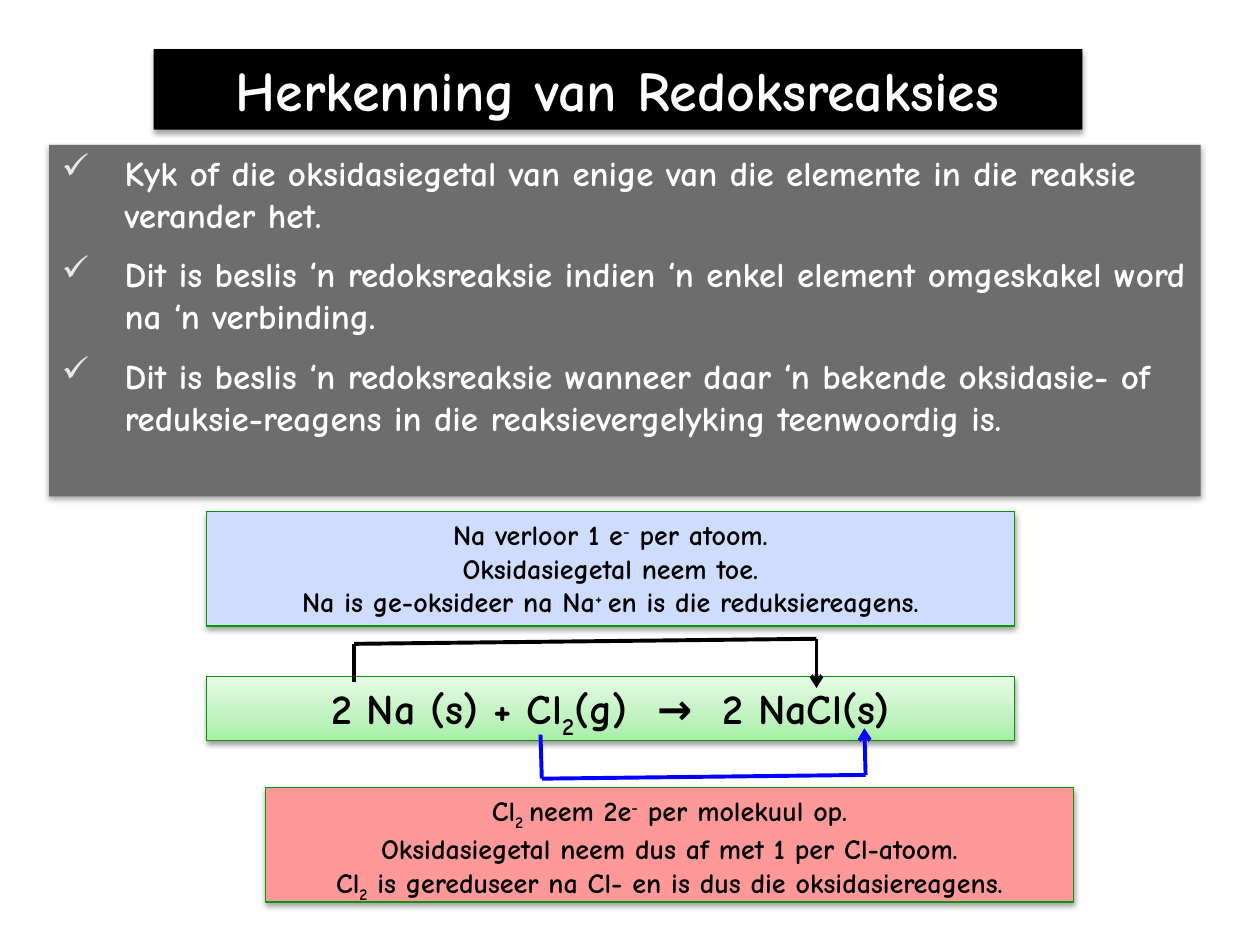
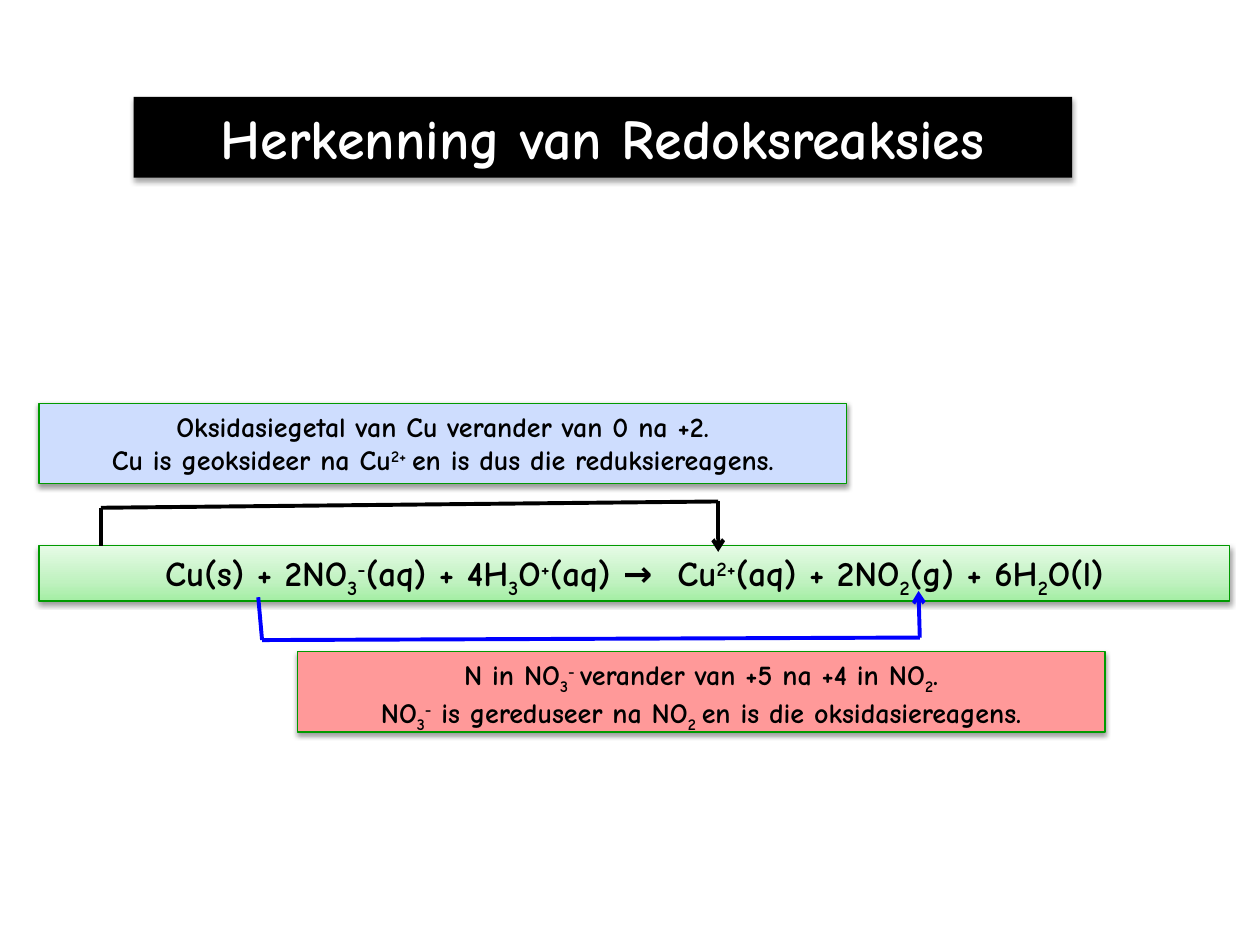
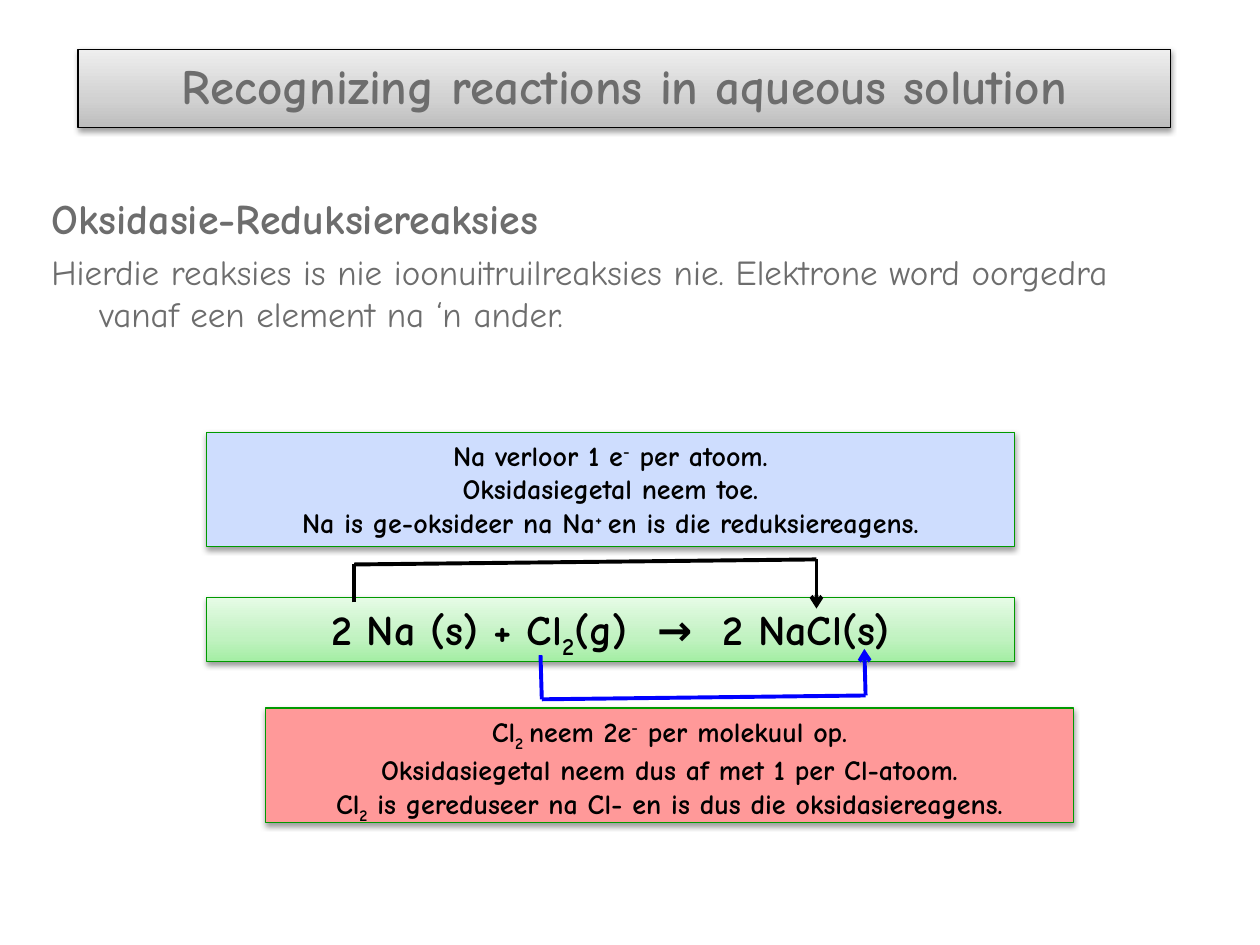
from copy import deepcopy
from dataclasses import dataclass
from itertools import pairwise

from pptx import Presentation
from pptx import util as u
from pptx.dml.color import RGBColor
from pptx.enum import shapes, text
from pptx.oxml import parse_xml
from pptx.oxml.ns import nsdecls, qn
from pptx.oxml.xmlchemy import OxmlElement

FONT = "Comic Neue"
BLACK = RGBColor(0x00, 0x00, 0x00)
WHITE = RGBColor(0xFF, 0xFF, 0xFF)
GREY = RGBColor(0x6D, 0x6D, 0x6D)
PALE_GREY = RGBColor(0xE9, 0xE9, 0xE9)
BLUE = RGBColor(0x00, 0x00, 0xFF)
GREEN = RGBColor(0x00, 0x9A, 0x00)
LIGHT_BLUE = RGBColor(0xCE, 0xDD, 0xFE)
LIGHT_RED = RGBColor(0xFF, 0x99, 0x99)
GREEN_FADE = (
    RGBColor(0xA4, 0xEE, 0xA4),
    RGBColor(0xC0, 0xF2, 0xC0),
    RGBColor(0xE6, 0xFB, 0xE6),
)
GREY_FADE = (
    RGBColor(0xBD, 0xBD, 0xBD),
    RGBColor(0xD1, 0xD1, 0xD1),
    RGBColor(0xEE, 0xEE, 0xEE),
)
FADE_POSITIONS = (0, 0.35, 1)
BASELINES = {"_": "-25000", "^": "30000"}
TITLE = "Herkenning van Redoksreaksies"
NOTE_WIDTH = 6.41


@dataclass(frozen=True)
class Frame:
    left: float
    top: float
    width: float
    height: float

    def raised(self, rise: float) -> "Frame":
        return Frame(self.left, self.top - rise, self.width, self.height)

    def lengths(self) -> list:
        return [u.Inches(n) for n in (self.left, self.top, self.width, self.height)]


@dataclass(frozen=True)
class Note:
    frame: Frame
    lines: tuple[str, ...]


@dataclass(frozen=True)
class Reaction:
    equation: Note
    equation_size: int
    oxidation: Note
    reduction: Note
    oxidation_path: tuple[tuple[float, float], ...]
    reduction_path: tuple[tuple[float, float], ...]


SODIUM = Reaction(
    equation=Note(
        Frame(1.64, 5.37, NOTE_WIDTH, 0.51), ("2 Na (s) + Cl|_2|(g)  →  2 NaCl(s)",)
    ),
    equation_size=24,
    oxidation=Note(
        Frame(1.64, 4.06, NOTE_WIDTH, 0.91),
        (
            "Na verloor 1 e|^-| per atoom.",
            "Oksidasiegetal neem toe.",
            "Na is ge-oksideer na Na|^+ |en is die reduksiereagens.",
        ),
    ),
    reduction=Note(
        Frame(2.11, 6.25, NOTE_WIDTH, 0.91),
        (
            "Cl|_2 |neem 2e|^-| per molekuul op.",
            "Oksidasiegetal neem dus af met 1 per Cl-atoom.",
            "Cl|_2| is gereduseer na Cl- en is dus die oksidasiereagens.",
        ),
    ),
    oxidation_path=((2.81, 5.41), (2.81, 5.11), (6.48, 5.07), (6.48, 5.46)),
    reduction_path=((4.29, 5.83), (4.3, 6.18), (6.87, 6.15), (6.86, 5.78)),
)
COPPER = Reaction(
    equation=Note(
        Frame(0.31, 4.33, 9.45, 0.44),
        (
            "Cu(s) + 2NO|_3|^-|(aq) + 4H|_3|O|^+|(aq) →  Cu|^2+|(aq)"
            " + 2NO|_2|(g) + 6H|_2|O(l)",
        ),
    ),
    equation_size=20,
    oxidation=Note(
        Frame(0.31, 3.2, NOTE_WIDTH, 0.64),
        (
            "Oksidasiegetal van Cu verander van 0 na +2.",
            "Cu is geoksideer na Cu|^2+ |en is dus die reduksiereagens.",
        ),
    ),
    reduction=Note(
        Frame(2.36, 5.17, NOTE_WIDTH, 0.64),
        (
            "N in NO|_3|^- |verander van +5 na +4 in NO|_2|.",
            "NO|_3|^-| is gereduseer na NO|_2 |en is die oksidasiereagens.",
        ),
    ),
    oxidation_path=((0.8, 4.33), (0.8, 4.03), (5.7, 3.98), (5.7, 4.38)),
    reduction_path=((2.05, 4.74), (2.08, 5.08), (7.3, 5.06), (7.29, 4.69)),
)
HINTS = (
    "Kyk of die oksidasiegetal van enige van die elemente in die reaksie verander het.",
    "Dit is beslis ‘n redoksreaksie indien ‘n enkel element omgeskakel word na ‘n verbinding.",
    "Dit is beslis ‘n redoksreaksie wanneer daar ‘n bekende oksidasie- of "
    "reduksie-reagens in die reaksievergelyking teenwoordig is.",
)


def add_bullet(para) -> None:
    properties = para._p.get_or_add_pPr()
    color = OxmlElement("a:buClr")
    value = OxmlElement("a:srgbClr")
    value.set("val", str(PALE_GREY))
    color.append(value)
    mark = OxmlElement("a:buChar")
    mark.set("char", "✓")
    properties.extend((color, mark))


def write(
    box, content: str, *, size: int, color: RGBColor = BLACK, bold: bool = True,
    align=text.PP_ALIGN.CENTER, gap: int = 0, hang: float = 0, bullet: bool = False,
) -> None:
    frame = box.text_frame
    first = not frame.text
    para = frame.paragraphs[0] if first else frame.add_paragraph()
    para.alignment = align
    if gap and not first:
        para.space_before = u.Pt(gap)
    if hang:
        properties = para._p.get_or_add_pPr()
        properties.set("marL", str(u.Inches(hang)))
        properties.set("indent", str(-u.Inches(hang)))
    if bullet:
        add_bullet(para)
    for part in content.split("|"):
        span = para.add_run()
        span.text = part.lstrip("_^")
        span.font.name = FONT
        span.font.size = u.Pt(size)
        span.font.bold = bold
        span.font.color.rgb = color
        if part[0] in BASELINES:
            span._r.get_or_add_rPr().set("baseline", BASELINES[part[0]])


def add_shadow(box, alpha: int, distance: float) -> None:
    box._element.spPr.append(parse_xml(
        f'<a:effectLst {nsdecls("a")}><a:outerShdw blurRad="{u.Pt(3.1)}" '
        f'dist="{u.Pt(distance)}" dir="5400000" rotWithShape="0">'
        f'<a:srgbClr val="{BLACK}"><a:alpha val="{alpha * 1000}"/></a:srgbClr>'
        "</a:outerShdw></a:effectLst>"
    ))


def add_panel(page, frame: Frame, fill, outline: RGBColor | None = None):
    box = page.shapes.add_shape(shapes.MSO_SHAPE.RECTANGLE, *frame.lengths())
    if isinstance(fill, RGBColor):
        box.fill.solid()
        box.fill.fore_color.rgb = fill
    else:
        box.fill.gradient()
        box.fill.gradient_angle = 90
        first_stop = box._element.spPr.find(f".//{qn('a:gs')}")
        first_stop.addnext(deepcopy(first_stop))
        for stop, color, position in zip(box.fill.gradient_stops, fill, FADE_POSITIONS):
            stop.color.rgb = color
            stop.position = position
    if outline is None:
        box.line.fill.background()
        add_shadow(box, 35, 1.8)
    else:
        box.line.color.rgb = outline
        box.line.width = u.Pt(0.75)
        add_shadow(box, 38, 1.6)
    box.text_frame.word_wrap = True
    box.text_frame.vertical_anchor = text.MSO_ANCHOR.TOP
    return box


def add_title(page, frame: Frame) -> None:
    write(add_panel(page, frame, BLACK), TITLE, size=32, color=WHITE)


def add_note(page, note: Note, rise: float, fill, size: int) -> None:
    box = add_panel(page, note.frame.raised(rise), fill, GREEN)
    for line in note.lines:
        write(box, line, size=size)


def add_bracket(page, points, rise: float, color: RGBColor) -> None:
    group = page.shapes.add_group_shape()
    for (x1, y1), (x2, y2) in pairwise(points):
        line = group.shapes.add_connector(
            shapes.MSO_CONNECTOR.STRAIGHT,
            u.Inches(x1), u.Inches(y1 - rise), u.Inches(x2), u.Inches(y2 - rise),
        )
        line.line.color.rgb = color
        line.line.width = u.Pt(2.25)
        line._element.spPr.append(OxmlElement("a:effectLst"))
    arrow = OxmlElement("a:tailEnd")
    arrow.set("type", "arrow")
    line.line._get_or_add_ln().append(arrow)


def add_reaction(page, reaction: Reaction, rise: float = 0) -> None:
    add_note(page, reaction.equation, rise, GREEN_FADE, reaction.equation_size)
    add_note(page, reaction.oxidation, rise, LIGHT_BLUE, 16)
    add_bracket(page, reaction.oxidation_path, rise, BLACK)
    add_bracket(page, reaction.reduction_path, rise, BLUE)
    add_note(page, reaction.reduction, rise, LIGHT_RED, 16)


def add_hints_page(page) -> None:
    box = add_panel(page, Frame(0.39, 1.15, 9.14, 2.79), GREY)
    for hint in HINTS:
        write(box, hint, size=20, color=WHITE, align=text.PP_ALIGN.LEFT,
              gap=10, hang=0.5, bullet=True)
    add_title(page, Frame(1.22, 0.39, 7.37, 0.64))
    add_reaction(page, SODIUM)


def add_copper_page(page) -> None:
    add_title(page, Frame(1.06, 0.77, 7.45, 0.64))
    add_reaction(page, COPPER)


def add_solution_page(page) -> None:
    heading = add_panel(page, Frame(0.62, 0.39, 8.67, 0.62), GREY_FADE, BLACK)
    write(heading, "Recognizing reactions in aqueous solution",
          size=28, color=GREY, hang=0.38)
    body = page.shapes.add_textbox(*Frame(0.31, 1.48, 9.1, 1.64).lengths())
    body.text_frame.word_wrap = True
    write(body, "Oksidasie-Reduksiereaksies", size=24, color=GREY,
          align=text.PP_ALIGN.LEFT, hang=0.38)
    write(body, "Hierdie reaksies is nie ioonuitruilreaksies nie. Elektrone word "
          "oorgedra vanaf een element na ‘n ander.", size=20, color=GREY, bold=False,
          align=text.PP_ALIGN.LEFT, gap=4, hang=0.38)
    add_reaction(page, SODIUM, rise=0.63)


def main() -> None:
    deck = Presentation()
    deck.slide_width = u.Inches(10)
    deck.slide_height = u.Inches(7.5)
    for fill_page in (add_hints_page, add_copper_page, add_solution_page):
        fill_page(deck.slides.add_slide(deck.slide_layouts[6]))
    deck.save("out.pptx")


if __name__ == "__main__":
    main()
